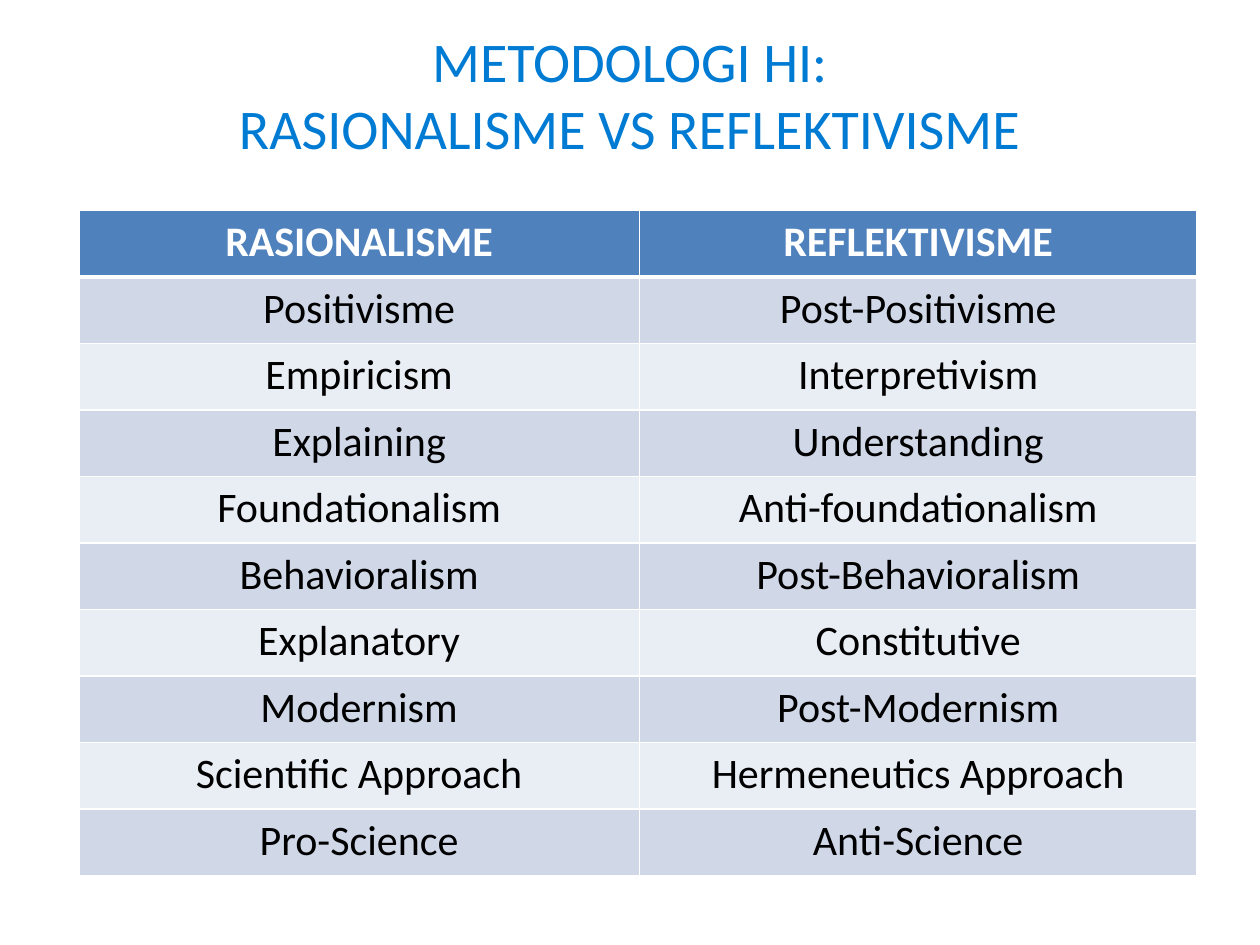
from lxml import etree
from pptx import Presentation
from pptx.dml.color import RGBColor
from pptx.enum.text import MSO_ANCHOR, PP_ALIGN
from pptx.oxml.ns import qn
from pptx.util import Cm, Pt

CENTER = PP_ALIGN.CENTER
MIDDLE = MSO_ANCHOR.MIDDLE


def write(tf, text, size=24, color="000000", bold=False):
    p = tf.paragraphs[0]
    p.alignment = CENTER
    for i, line in enumerate(text.split("\n")):
        if i:
            p.add_line_break()
        r = p.add_run()
        r.text = line
        r.font.name = "Calibri"
        r.font.size = Pt(size)
        r.font.bold = bold
        r.font.color.rgb = RGBColor.from_string(color)


def set_borders(cell, bottom):
    tcPr = cell._tc.get_or_add_tcPr()
    widths = {"a:lnL": 1, "a:lnR": 1, "a:lnT": 1, "a:lnB": bottom}
    for i, (tag, width) in enumerate(widths.items()):
        ln = etree.Element(qn(tag), w=str(Pt(width)))
        fill = etree.SubElement(ln, qn("a:solidFill"))
        etree.SubElement(fill, qn("a:srgbClr"), val="FFFFFF")
        tcPr.insert(i, ln)


prs = Presentation()
prs.slide_width, prs.slide_height = Cm(25.4), Cm(19.05)
s = prs.slides.add_slide(prs.slide_layouts[6])

# Comparison table
rows = [
    ("RASIONALISME", "REFLEKTIVISME"),
    ("Positivisme", "Post-Positivisme"),
    ("Empiricism", "Interpretivism"),
    ("Explaining", "Understanding"),
    ("Foundationalism", "Anti-foundationalism"),
    ("Behavioralism", "Post-Behavioralism"),
    ("Explanatory", "Constitutive"),
    ("Modernism", "Post-Modernism"),
    ("Scientific Approach", "Hermeneutics Approach"),
    ("Pro-Science", "Anti-Science"),
]
table = s.shapes.add_table(len(rows), 2, Cm(1.59), Cm(4.24),
                           Cm(22.54), Cm(13.41)).table
table.columns[0].width = Cm(11.3)
table.columns[1].width = Cm(11.24)

for i, row in enumerate(rows):
    header = i == 0
    fill = "4F81BD" if header else ("E9EDF4", "D0D8E8")[i % 2]
    for j, text in enumerate(row):
        cell = table.cell(i, j)
        cell.fill.solid()
        cell.fill.fore_color.rgb = RGBColor.from_string(fill)
        set_borders(cell, bottom=3 if header else 1)
        write(cell.text_frame, text, bold=header,
              color="FFFFFF" if header else "000000")

# Title
sp = s.shapes.add_textbox(Cm(1.27), Cm(0.3), Cm(22.86), Cm(3.18))
tf = sp.text_frame
tf.word_wrap = True
tf.vertical_anchor = MIDDLE
write(tf, "METODOLOGI HI:\nRASIONALISME VS REFLEKTIVISME", size=32, color="007BD3")

prs.save("out.pptx")
